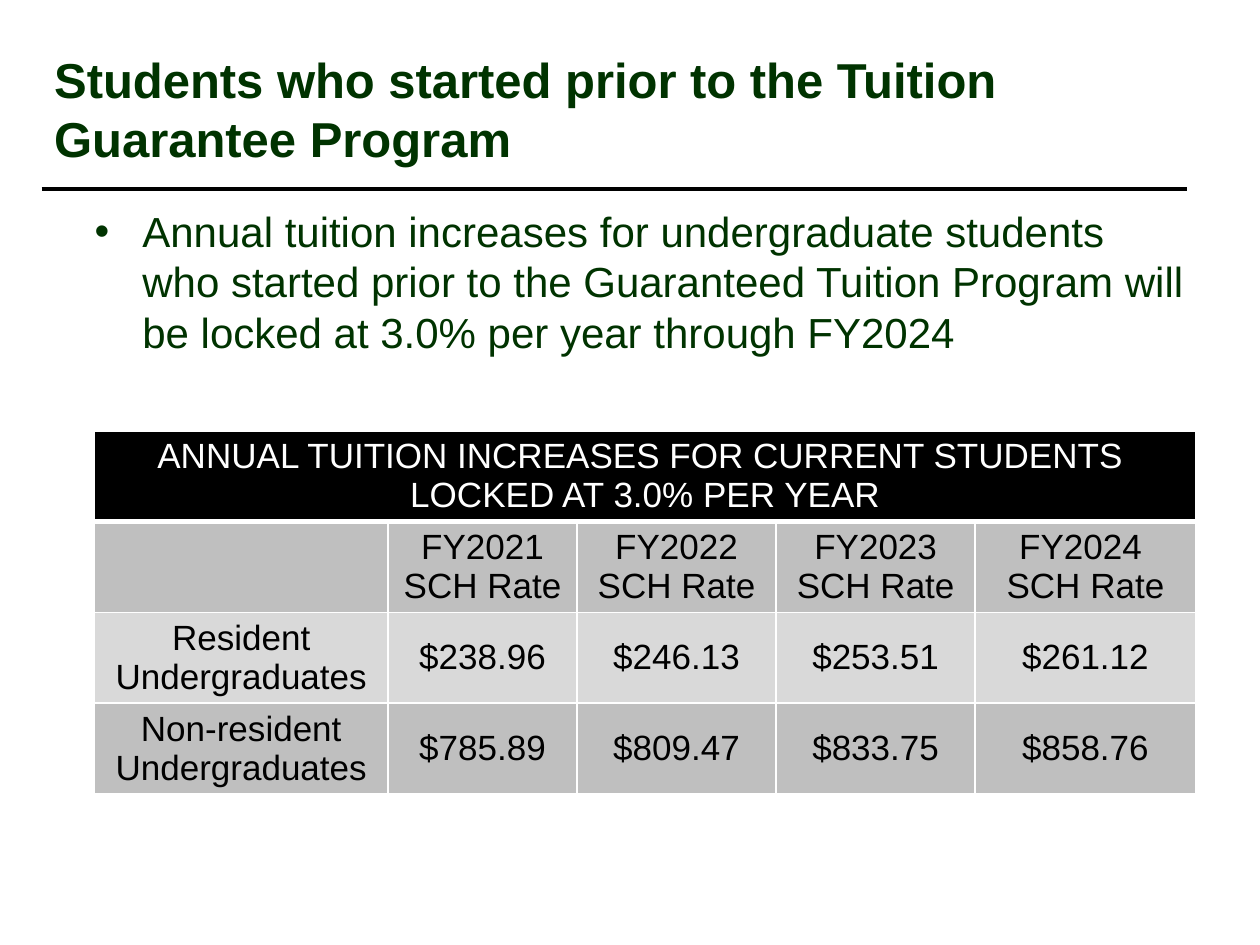
from lxml.etree import SubElement
from pptx import Presentation
from pptx.dml.color import RGBColor
from pptx.enum.shapes import MSO_CONNECTOR
from pptx.enum.text import MSO_ANCHOR, MSO_AUTO_SIZE, PP_ALIGN
from pptx.oxml.ns import qn
from pptx.util import Inches, Pt

# Content
TITLE = "Students who started prior to the Tuition Guarantee Program"
BULLET = ("Annual tuition increases for undergraduate students who started prior "
          "to the Guaranteed Tuition Program will be locked at 3.0% per year "
          "through FY2024")
HEADING = "ANNUAL TUITION INCREASES FOR CURRENT STUDENTS \nLOCKED AT 3.0% PER YEAR"
ROWS = [
    ["", "FY2021\nSCH Rate", "FY2022\nSCH Rate", "FY2023\nSCH Rate", "FY2024 \nSCH Rate"],
    ["Resident Undergraduates", "$238.96", "$246.13", "$253.51", "$261.12"],
    ["Non-resident Undergraduates", "$785.89", "$809.47", "$833.75", "$858.76"],
]
COLUMN_WIDTHS = [2.33, 1.5, 1.58, 1.58, 1.75]
ROW_HEIGHT = 0.69
GREEN, BLACK, WHITE = "003300", "000000", "FFFFFF"
BANDS = ["BFBFBF", "D9D9D9"]


def color(value):
    return RGBColor.from_string(value)


def place(shape, left, top, width, height):
    shape.left, shape.top = Inches(left), Inches(top)
    shape.width, shape.height = Inches(width), Inches(height)


def style(frame, size, ink, align, bold=False):
    for para in frame.paragraphs:
        para.alignment = align
        para.font.size = Pt(size)
        for span in para.runs:
            span.font.name = "Arial"
            span.font.size = Pt(size)
            span.font.bold = bold
            span.font.color.rgb = color(ink)


def fill_placeholder(shape, text, size, anchor, bold=False):
    frame = shape.text_frame
    frame.text = text
    frame.word_wrap = True
    frame.auto_size = MSO_AUTO_SIZE.NONE
    frame.vertical_anchor = anchor
    style(frame, size, GREEN, PP_ALIGN.LEFT, bold)
    return frame.paragraphs[0]


def set_borders(cell, bottom=1):
    properties = cell._tc.get_or_add_tcPr()
    widths = {"a:lnL": 1, "a:lnR": 1, "a:lnT": 1, "a:lnB": bottom}
    for tag, width in widths.items():
        line = SubElement(properties, qn(tag), w=str(Pt(width)))
        paint = SubElement(line, qn("a:solidFill"))
        SubElement(paint, qn("a:srgbClr"), val=WHITE)


def fill_cell(cell, text, background, ink, anchor, bottom=1):
    set_borders(cell, bottom)
    cell.fill.solid()
    cell.fill.fore_color.rgb = color(background)
    cell.vertical_anchor = anchor
    cell.text_frame.text = text
    style(cell.text_frame, 20, ink, PP_ALIGN.CENTER)


deck = Presentation()
deck.slide_width, deck.slide_height = Inches(10), Inches(7.5)
page = deck.slides.add_slide(deck.slide_layouts[1])
title, body = page.placeholders[0], page.placeholders[1]

# Bulleted statement
place(body, 0.65, 1.58, 8.85, 1.5)
para = fill_placeholder(body, BULLET, 24, MSO_ANCHOR.TOP)
properties = para._p.get_or_add_pPr()
properties.set("marL", str(Inches(0.38)))
properties.set("indent", str(-Inches(0.38)))
SubElement(properties, qn("a:buChar"), char="•")

# Title and the rule under it
place(title, 0.33, 0.25, 9.42, 1.22)
fill_placeholder(title, TITLE, 28, MSO_ANCHOR.MIDDLE, bold=True)
rule = page.shapes.add_connector(
    MSO_CONNECTOR.STRAIGHT, Inches(0.33), Inches(1.5), Inches(9.42), Inches(1.5))
rule.line.color.rgb = color(BLACK)
rule.line.width = Pt(2.25)
SubElement(rule._element.spPr, qn("a:effectLst"))

# Tuition table
row_count = len(ROWS) + 1
table = page.shapes.add_table(
    row_count, len(COLUMN_WIDTHS), Inches(0.75), Inches(3.42),
    Inches(sum(COLUMN_WIDTHS)), Inches(ROW_HEIGHT * row_count)).table
for column, width in zip(table.columns, COLUMN_WIDTHS):
    column.width = Inches(width)

heading = table.cell(0, 0)
heading.merge(table.cell(0, len(COLUMN_WIDTHS) - 1))
fill_cell(heading, HEADING, BLACK, WHITE, MSO_ANCHOR.TOP, bottom=3)
for r, row in enumerate(ROWS):
    for c, text in enumerate(row):
        fill_cell(table.cell(r + 1, c), text, BANDS[r % 2], BLACK, MSO_ANCHOR.MIDDLE)

deck.save("out.pptx")
